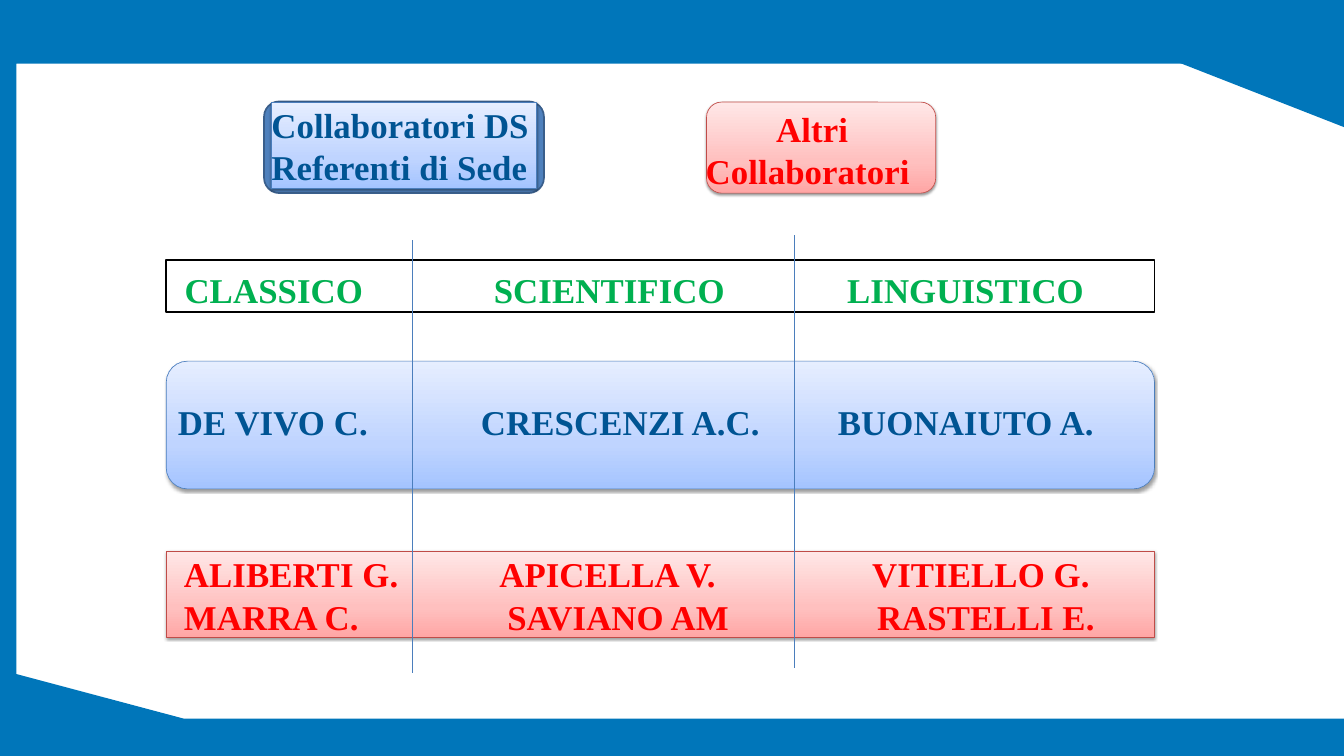
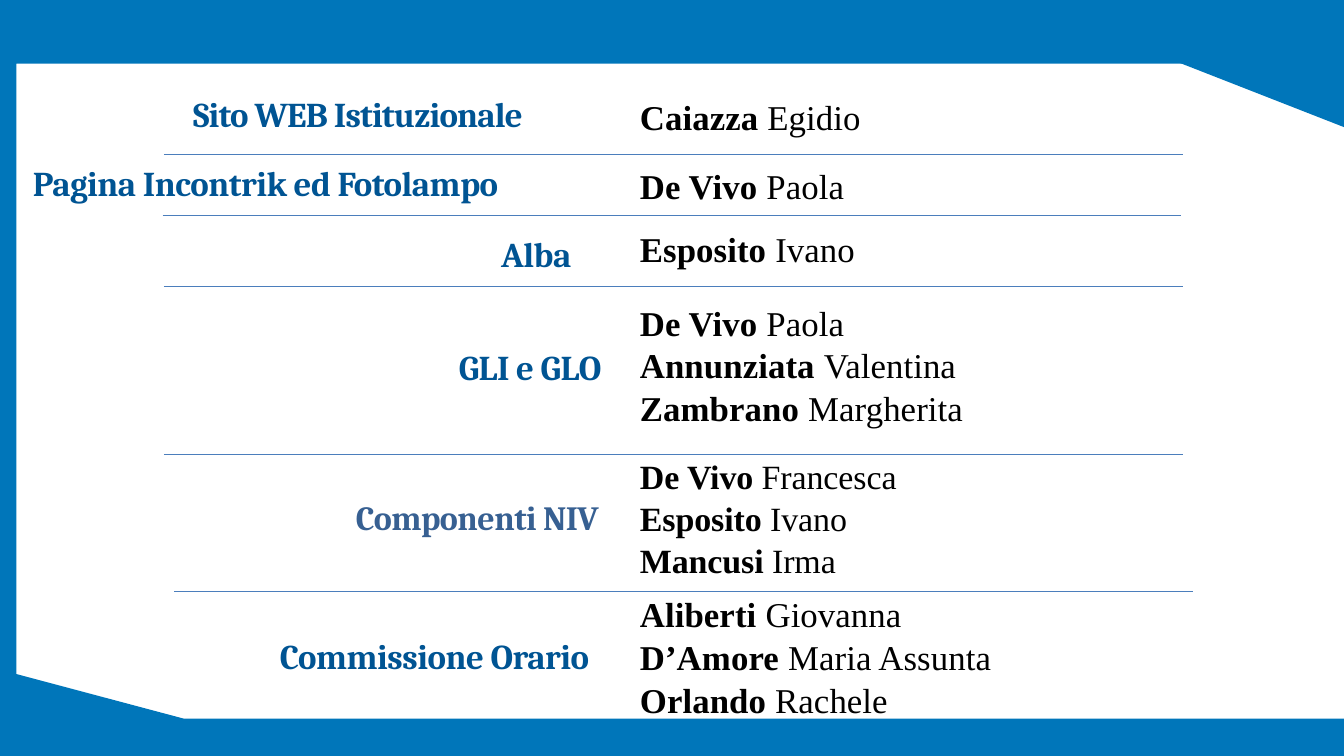
from copy import deepcopy
from dataclasses import dataclass

from pptx import Presentation
from pptx.dml.color import RGBColor as Rgb
from pptx.enum.shapes import MSO_CONNECTOR as Connector, MSO_SHAPE as Preset
from pptx.enum.text import MSO_ANCHOR as Anchor, PP_ALIGN as Align
from pptx.oxml.ns import qn
from pptx.oxml.xmlchemy import OxmlElement as Element
from pptx.util import Emu, Pt

SCALE = 9144  # EMU in one px, 100 px to the inch
WIDTH, HEIGHT = 2199, 1237


@dataclass(frozen=True)
class Theme:
    serif: str = "Times New Roman"
    heading: str = "Cambria"
    size: int = 41
    small: int = 40
    frame: str = "0076BA"
    navy: str = "005493"
    slate: str = "376092"
    red: str = "FF0000"
    green: str = "00B050"
    black: str = "000000"
    white: str = "FFFFFF"
    rule: str = "4B7EBC"
    plate: str = "4F81BD"
    plate_edge: str = "3A5F8C"
    red_edge: str = "BF4C48"
    blue_fade: tuple = ("A4C4FF", "BFD4FF", "E6EEFF")
    red_fade: tuple = ("FFA6A5", "FFC0BF", "FFE7E7")
    fade_stops: tuple = (0, 0.35, 1)


THEME = Theme()


def emu(*lengths):
    return [Emu(length * SCALE) for length in lengths]


def child(parent, tag, **attributes):
    element = Element(tag)
    for name, value in attributes.items():
        element.set(name, str(value))
    parent.append(element)
    return element


class Deck:
    def __init__(self):
        self.prs = Presentation()
        self.prs.slide_width, self.prs.slide_height = emu(WIDTH, HEIGHT)
        self.slide = None

    def new_slide(self):
        self.slide = self.prs.slides.add_slide(self.prs.slide_layouts[6])
        self.outline((WIDTH, 1176), (301, 1176), (27, 1103), (27, 104),
                     (WIDTH, 104), (WIDTH, 0), (0, 0), (0, HEIGHT), (WIDTH, HEIGHT))
        self.outline((WIDTH, 7), (1685, 7), (WIDTH, 208))

    def outline(self, start, *points):
        builder = self.slide.shapes.build_freeform(*start, scale=SCALE)
        builder.add_line_segments(points, close=True)
        shape = builder.convert_to_shape()
        shape.shadow.inherit = False
        shape.fill.solid()
        shape.fill.fore_color.rgb = Rgb.from_string(THEME.frame)
        shape.line.fill.background()

    def panel(self, box, fill, edge, weight=0.75, preset=Preset.RECTANGLE):
        """Draw a panel; a tuple of colours as fill gives a shadowed fade."""
        shape = self.slide.shapes.add_shape(preset, *emu(*box))
        shape.shadow.inherit = False
        if isinstance(fill, tuple):
            self.fade(shape, fill)
        else:
            shape.fill.solid()
            shape.fill.fore_color.rgb = Rgb.from_string(fill)
        shape.line.color.rgb = Rgb.from_string(edge)
        shape.line.width = Pt(weight)
        return shape

    def fade(self, shape, colours):
        """Fill from bottom to top and add a soft shadow below."""
        shape.fill.gradient()
        shape.fill.gradient_angle = 90
        props = shape.element.spPr
        stops = props.find(qn("a:gradFill")).find(qn("a:gsLst"))
        stops.append(deepcopy(stops[0]))
        for stop, position, colour in zip(shape.fill.gradient_stops, THEME.fade_stops, colours):
            stop.position = position
            stop.color.rgb = Rgb.from_string(colour)
        shadow = child(props.find(qn("a:effectLst")), "a:outerShdw", blurRad=Pt(3.1),
                       dist=Pt(1.6), dir=5400000, rotWithShape=0)
        child(child(shadow, "a:srgbClr", val=THEME.black), "a:alpha", val=38000)

    def text(self, box, lines, **style):
        self.set_lines(self.slide.shapes.add_textbox(*emu(*box)), lines, **style)

    def set_lines(self, shape, lines, colour=THEME.navy, font=THEME.serif, size=THEME.size,
                  align=Align.LEFT, spacing=0.1, inset=0, stops=()):
        """Each line is a list of (text, bold) pairs; stops holds tab stops per line."""
        frame = shape.text_frame
        layout = {"word_wrap": True, "vertical_anchor": Anchor.TOP, "margin_left": emu(inset)[0],
                  "margin_top": emu(2)[0], "margin_right": 0, "margin_bottom": 0}
        for name, value in layout.items():
            setattr(frame, name, value)
        look = {"name": font, "size": Pt(size)}
        for index, line in enumerate(lines):
            paragraph = frame.paragraphs[0] if index == 0 else frame.add_paragraph()
            paragraph.alignment = align
            if index:
                paragraph.space_before = Pt(1.2)
            if stops:
                tabs = child(paragraph._p.get_or_add_pPr(), "a:tabLst")
                for stop in stops[index]:
                    child(tabs, "a:tab", pos=stop * SCALE, algn="l")
            for words, bold in line:
                run = paragraph.add_run()
                run.text = words
                for name, value in {**look, "bold": bold}.items():
                    setattr(run.font, name, value)
                run.font.color.rgb = Rgb.from_string(colour)
                run._r.get_or_add_rPr().set("spc", str(round(spacing * 100)))

    def rule(self, x1, y1, x2, y2):
        line = self.slide.shapes.add_connector(Connector.STRAIGHT, *emu(x1, y1, x2, y2))
        line.line.color.rgb = Rgb.from_string(THEME.rule)
        line.line.width = Pt(0.75)
        child(line._element.spPr, "a:effectLst")


def strong(*lines):
    return [[(line, True)] for line in lines]


def people(*names):
    return [[(surname + " ", True), (name, False)] for surname, name in names]


def staff_by_school(deck):
    deck.new_slide()
    rounded = Preset.ROUNDED_RECTANGLE
    left, width = 272, 1617
    deck.panel((1156, 167, 375, 149), THEME.red_fade, THEME.red_edge, preset=rounded)
    deck.panel((432, 166, 458, 150), THEME.plate, THEME.plate_edge, 2, rounded)
    deck.panel((left, 591, width, 209), THEME.blue_fade, THEME.rule, preset=rounded)
    deck.panel((left, 425, width, 86), THEME.white, THEME.black, 2)
    deck.text((291, 653, 1745, 71), strong("DE VIVO C.\tCRESCENZI A.C.\tBUONAIUTO A."),
              stops=[(496, 1080)])
    leaders = deck.panel((444, 167, 434, 141), THEME.blue_fade, THEME.rule)
    deck.set_lines(leaders, strong("Collaboratori DS", "Referenti di Sede"))
    deck.text((1112, 174, 434, 140), strong("Altri Collaboratori "),
              colour=THEME.red, align=Align.CENTER)
    others = deck.panel((left, 902, width, 141), THEME.red_fade, THEME.red_edge)
    deck.set_lines(others, strong("ALIBERTI G.\tAPICELLA V.\tVITIELLO G.",
                                  "MARRA C.\tSAVIANO AM\tRASTELLI E."),
                   colour=THEME.red, inset=29, stops=[(516, 1126), (529, 1134)])
    deck.text((302, 438, 1743, 71), strong("CLASSICO\tSCIENTIFICO\tLINGUISTICO"),
              colour=THEME.green, stops=[(506, 1084)])
    for x, top in ((674, 393), (1299, 385)):
        deck.rule(x, top, x, top + 708)


def staff_by_task(deck):
    deck.new_slide()
    label = {"font": THEME.heading, "spacing": -0.6}
    right = {**label, "align": Align.RIGHT}
    tasks = [
        ((316, 150, 698, 71), "Sito WEB Istituzionale", {**label, "spacing": -0.95}),
        ((54, 262, 910, 72), "Pagina Incontrik ed Fotolampo", label),
        ((820, 378, 142, 72), "Alba", label),
        ((74, 564, 910, 71), "GLI e GLO", right),
        ((54, 1037, 910, 71), "Commissione Orario", right),
        ((189, 810, 791, 69), "Componenti NIV",
         {**right, "colour": THEME.slate, "size": THEME.small}),
    ]
    for box, task, style in tasks:
        deck.text(box, strong(task), **style)

    teams = [
        (155, 71, [("Caiazza", "Egidio")], {}),
        (267, 72, [("De Vivo", "Paola")], {}),
        (370, 72, [("Esposito", "Ivano")], {}),
        (491, 211, [("De Vivo", "Paola"), ("Annunziata", "Valentina"),
                    ("Zambrano", "Margherita")], {}),
        (744, 201, [("De Vivo", "Francesca"), ("Esposito", "Ivano"), ("Mancusi", "Irma")],
         {"size": THEME.small, "spacing": -0.1}),
        (968, 209, [("Aliberti", "Giovanna"), ("D’Amore", "Maria Assunta"),
                    ("Orlando", "Rachele")], {}),
    ]
    for top, height, names, style in teams:
        deck.text((1047, top, 653, height), people(*names), colour=THEME.black, **style)

    for x, y in ((268, 744), (285, 968), (268, 468), (266, 352), (268, 252)):
        deck.rule(x, y, x + 1667, y)


def main():
    deck = Deck()
    staff_by_school(deck)
    staff_by_task(deck)
    deck.prs.save("out.pptx")


if __name__ == "__main__":
    main()
